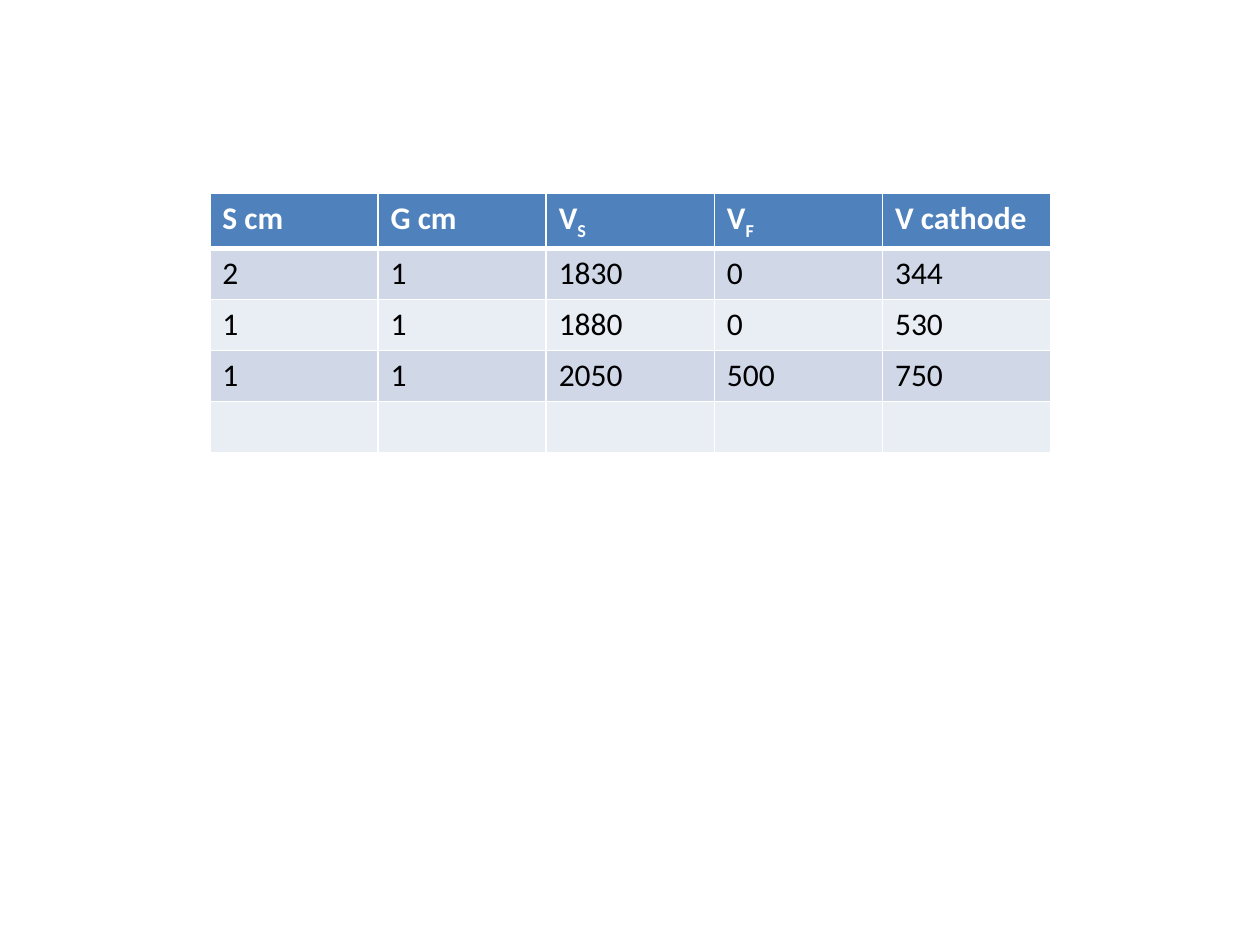
from dataclasses import dataclass

from lxml import etree
from pptx import Presentation
from pptx.dml.color import RGBColor
from pptx.oxml.ns import qn
from pptx.table import Table, _Cell
from pptx.util import Cm, Pt


@dataclass(frozen=True)
class Theme:
    font: str = "Calibri"
    size: int = 18
    head: str = "4F81BD"
    bands: tuple[str, str] = ("D0D8E8", "E9EDF4")
    light: str = "FFFFFF"
    dark: str = "000000"
    thin: int = 1
    thick: int = 3
    sub: int = -25


@dataclass(frozen=True)
class Entry:
    text: str = ""
    sub: str = ""


THEME = Theme()
HEAD = [Entry("S cm"), Entry("G cm"), Entry("V", "S"), Entry("V", "F"), Entry("V cathode")]
DATA = [
    ["2", "1", "1830", "0", "344"],
    ["1", "1", "1880", "0", "530"],
    ["1", "1", "2050", "500", "750"],
    [""] * len(HEAD),
]
ROWS = [HEAD] + [[Entry(text) for text in line] for line in DATA]
LEFT, TOP = Cm(4.23), Cm(3.89)
WIDTH, HEIGHT = Cm(3.39), Cm(1.03)


def draw_edge(cell: _Cell, side: str, width: int) -> None:
    props = cell._tc.get_or_add_tcPr()
    line = etree.SubElement(props, qn(f"a:ln{side}"), w=str(Pt(width)))
    fill = etree.SubElement(line, qn("a:solidFill"))
    etree.SubElement(fill, qn("a:srgbClr"), val=THEME.light)


def write_text(cell: _Cell, entry: Entry, head: bool) -> None:
    para = cell.text_frame.paragraphs[0]
    para.font.size = Pt(THEME.size)
    if not entry.text:
        return
    para.text = entry.text
    if entry.sub:
        low = para.add_run()
        low.text = entry.sub
        low._r.get_or_add_rPr().set("baseline", str(THEME.sub * 1000))
    for run in para.runs:
        run.font.name = THEME.font
        run.font.size = Pt(THEME.size)
        run.font.bold = head
        run.font.color.rgb = RGBColor.from_string(THEME.light if head else THEME.dark)


def draw_cell(cell: _Cell, entry: Entry, row: int) -> None:
    head = row == 0
    write_text(cell, entry, head)
    edges = {
        "L": THEME.thin,
        "R": THEME.thin,
        "T": THEME.thick if row == 1 else THEME.thin,
        "B": THEME.thick if head else THEME.thin,
    }
    for side, width in edges.items():
        draw_edge(cell, side, width)
    cell.fill.solid()
    shade = THEME.head if head else THEME.bands[(row - 1) % 2]
    cell.fill.fore_color.rgb = RGBColor.from_string(shade)


def fill_table(table: Table) -> None:
    for column in table.columns:
        column.width = WIDTH
    for row, line in enumerate(ROWS):
        table.rows[row].height = HEIGHT
        for col, entry in enumerate(line):
            draw_cell(table.cell(row, col), entry, row)


def main() -> None:
    deck = Presentation()
    deck.slide_width, deck.slide_height = Cm(25.4), Cm(19.05)
    slide = deck.slides.add_slide(deck.slide_layouts[6])
    rows, cols = len(ROWS), len(HEAD)
    frame = slide.shapes.add_table(rows, cols, LEFT, TOP, WIDTH * cols, HEIGHT * rows)
    fill_table(frame.table)
    deck.save("out.pptx")


if __name__ == "__main__":
    main()
